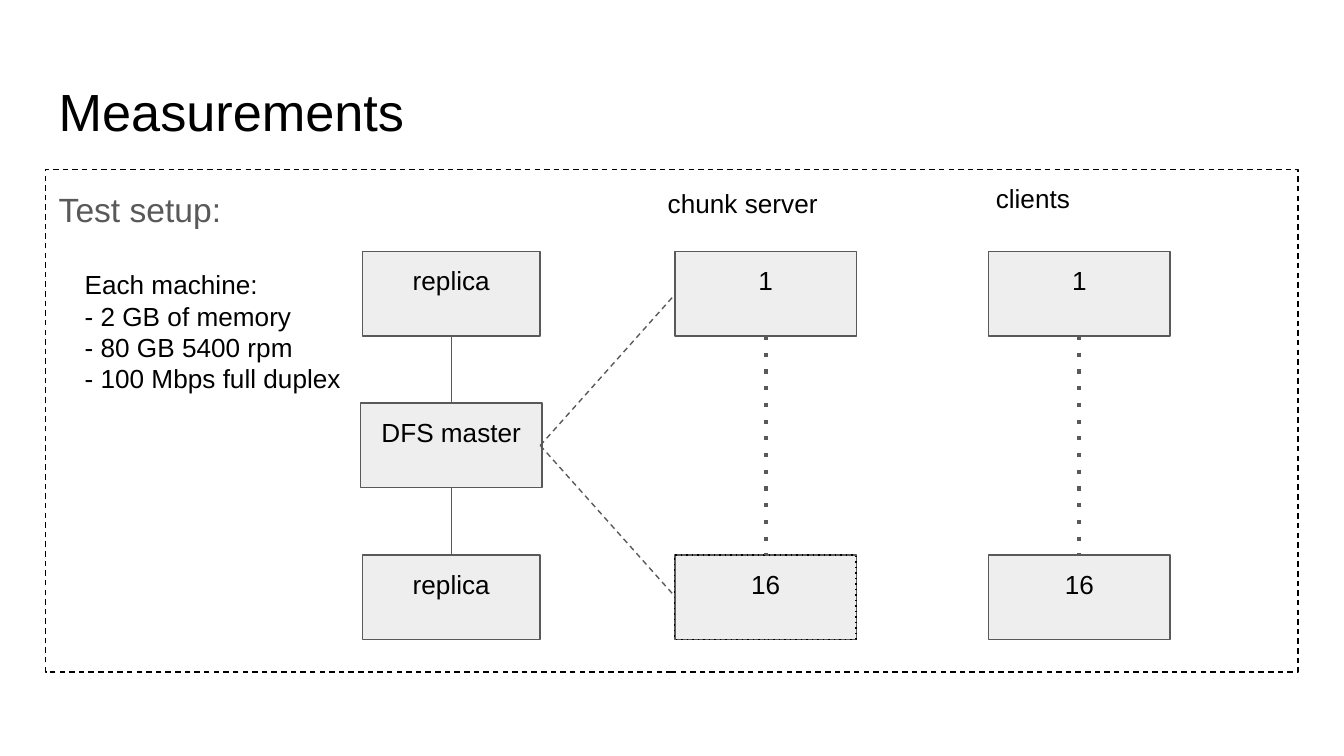
"""Build the Measurements slide showing the test setup of a distributed file system."""
from lxml.etree import SubElement
from pptx import Presentation
from pptx.dml.color import RGBColor
from pptx.enum.shapes import MSO_CONNECTOR, MSO_SHAPE
from pptx.enum.text import MSO_ANCHOR, PP_ALIGN
from pptx.oxml.ns import qn
from pptx.util import Cm, Pt

COLORS = {"text": "000000", "grey": "595959", "box": "EEEEEE"}


def write(s, text, size=14, color="text", align=PP_ALIGN.LEFT, spacing=1.0, after=0):
    tf = s.text_frame
    tf.word_wrap = True
    tf.vertical_anchor = MSO_ANCHOR.TOP
    tf.margin_left = tf.margin_right = tf.margin_top = tf.margin_bottom = Cm(0.25)
    for i, line in enumerate(text.split("\n")):
        p = tf.add_paragraph() if i else tf.paragraphs[0]
        p.alignment, p.line_spacing = align, spacing
        p.space_before, p.space_after = Pt(0), Pt(after)
        r = p.add_run()
        r.text = line
        r.font.name, r.font.size = "Arial", Pt(size)
        r.font.color.rgb = RGBColor.from_string(COLORS[color])


def outline(s, color="grey", width=0.75, dash="solid"):
    s.line.color.rgb = RGBColor.from_string(COLORS[color])
    s.line.width = Pt(width)
    spPr = s._element.spPr
    SubElement(spPr.find(qn("a:ln")), qn("a:prstDash")).set("val", dash)
    if spPr.find(qn("a:effectLst")) is None:
        SubElement(spPr, qn("a:effectLst"))


prs = Presentation()
prs.slide_width, prs.slide_height = Cm(25.4), Cm(14.29)
slide = prs.slides.add_slide(prs.slide_layouts[1])
shapes = slide.shapes

title, body = slide.placeholders
for s, top, height in [(title, 1.24, 1.6), (body, 3.2, 9.5)]:
    s.left, s.top, s.width, s.height = Cm(0.86), Cm(top), Cm(23.67), Cm(height)
write(title, "Measurements", size=28)
write(body, "Test setup:", size=18, color="grey", spacing=1.15, after=16)
outline(body, color="text", dash="dash")
pPr = body.text_frame.paragraphs[0]._p.get_or_add_pPr()
pPr.set("marL", "0")
pPr.set("indent", "0")
SubElement(pPr, qn("a:buNone"))

master_x, chunk_x, client_x = 8.53, 14.47, 20.4
box_h = 1.6
rows = [4.75 + 2.87 * i for i in range(3)]
boxes = [
    ("replica", master_x, 0, 3.35),
    ("DFS master", master_x, 1, 3.43),
    ("replica", master_x, 2, 3.35),
    ("1", chunk_x, 0, 3.43),
    ("16", chunk_x, 2, 3.43),
    ("1", client_x, 0, 3.43),
    ("16", client_x, 2, 3.43),
]
for text, x, row, width in boxes:
    s = shapes.add_shape(MSO_SHAPE.RECTANGLE, Cm(x - width / 2), Cm(rows[row]), Cm(width), Cm(box_h))
    s.shadow.inherit = False
    s.fill.solid()
    s.fill.fore_color.rgb = RGBColor.from_string(COLORS["box"])
    outline(s)
    write(s, text, align=PP_ALIGN.CENTER)

last_chunk = shapes.add_shape(MSO_SHAPE.RECTANGLE, Cm(12.75), Cm(rows[2]), Cm(3.43), Cm(box_h))
last_chunk.shadow.inherit = False
last_chunk.fill.background()
outline(last_chunk, color="text", dash="dot")

labels = [
    ("chunk server", 12.37, 3.3, 4.17, 0.97),
    ("clients", 18.57, 3.2, 4.17, 0.97),
    ("Each machine:\n- 2 GB of memory\n- 80 GB 5400 rpm\n- 100 Mbps full duplex", 1.35, 4.83, 5.49, 7.26),
]
for text, *place in labels:
    write(shapes.add_textbox(*map(Cm, place)), text)

ends = [row + box_h for row in rows]
mids = [row + box_h / 2 for row in rows]
links = [
    (master_x, ends[0], master_x, rows[1], 0.75, "solid"),
    (master_x, ends[1], master_x, rows[2], 0.75, "solid"),
    (chunk_x, ends[0], chunk_x, rows[2], 2.25, "dot"),
    (client_x, ends[0], client_x, rows[2], 2.25, "dot"),
    (10.21, mids[1], 12.77, mids[0], 0.75, "dash"),
    (10.21, mids[1], 12.77, mids[2], 0.75, "dash"),
]
for *points, width, dash in links:
    s = shapes.add_connector(MSO_CONNECTOR.STRAIGHT, *map(Cm, points))
    outline(s, width=width, dash=dash)

prs.save("out.pptx")
